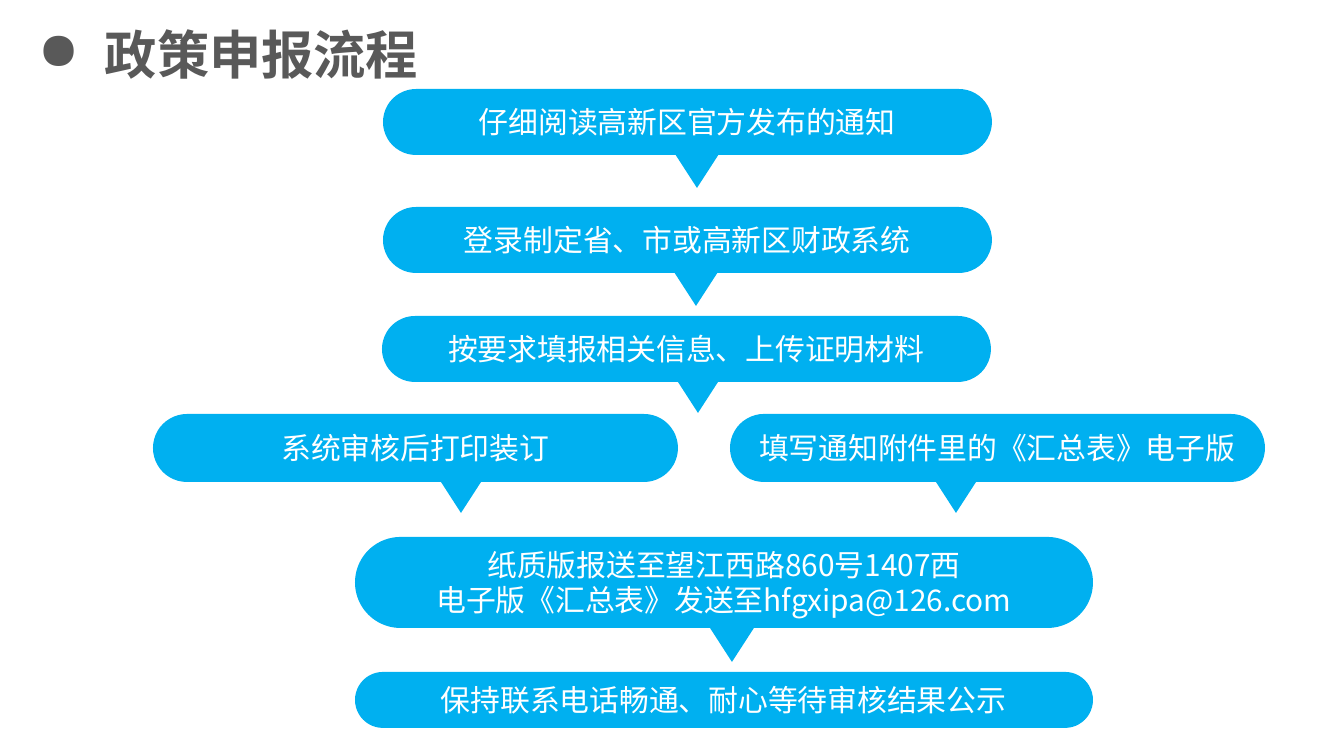
from lxml import etree
from pptx import Presentation
from pptx.dml.color import RGBColor
from pptx.enum.shapes import MSO_SHAPE
from pptx.enum.text import MSO_ANCHOR, MSO_AUTO_SIZE, PP_ALIGN
from pptx.oxml.ns import qn
from pptx.util import Pt

PILL = MSO_SHAPE.ROUNDED_RECTANGLE
MIDDLE = MSO_ANCHOR.MIDDLE
NO_FIT = MSO_AUTO_SIZE.NONE
LEFT, CENTER = PP_ALIGN.LEFT, PP_ALIGN.CENTER
FONT = "Noto Sans CJK SC"
BLUE, WHITE, GRAY = "00B0F0", "FFFFFF", "595959"
SCALE = 9144000 / 1344


def px(n):
    return round(n * SCALE)


def style(paragraph, size, color, bold=False):
    for run in paragraph.runs:
        run.font.size = Pt(size)
        run.font.bold = bold
        run.font.color.rgb = RGBColor.from_string(color)
        run.font.name = FONT
        etree.SubElement(run.font._element, qn("a:ea"), typeface=FONT)


prs = Presentation()
prs.slide_width, prs.slide_height = px(1344), px(756)
slide = prs.slides.add_slide(prs.slide_layouts[5])

title = slide.shapes.title
title.left, title.top, title.width, title.height = px(38), px(26), px(391), px(56)
heading = title.text_frame
heading.text = "政策申报流程"
heading.auto_size = NO_FIT
heading.vertical_anchor = MIDDLE
heading.margin_left = heading.margin_right = 0
topic = heading.paragraphs[0]
topic.alignment = LEFT
indent = topic._p.get_or_add_pPr()
indent.set("marL", str(px(67)))
indent.set("indent", str(px(-67)))
etree.SubElement(indent, qn("a:buChar"), char="●")
style(topic, 28, GRAY, True)

ARROW_WIDTH, ARROW_HEIGHT = 66, 51
arrows = [(664, 137), (663, 255), (665, 362), (428, 462), (923, 462), (699, 611)]
for left, top in arrows:
    outline = slide.shapes.build_freeform(left, top, scale=SCALE)
    outline.add_line_segments(
        [(left + ARROW_WIDTH, top), (left + ARROW_WIDTH // 2, top + ARROW_HEIGHT)]
    )
    arrow = outline.convert_to_shape()
    arrow.shadow.inherit = False
    arrow.fill.solid()
    arrow.fill.fore_color.rgb = RGBColor.from_string(BLUE)
    arrow.line.fill.background()

steps = [
    (383, 89, 609, 66, "仔细阅读高新区官方发布的通知"),
    (383, 207, 609, 66, "登录制定省、市或高新区财政系统"),
    (382, 316, 609, 66, "按要求填报相关信息、上传证明材料"),
    (153, 414, 525, 68, "系统审核后打印装订"),
    (730, 414, 535, 68, "填写通知附件里的《汇总表》电子版"),
    (355, 537, 738, 91, "纸质版报送至望江西路860号1407西\n电子版《汇总表》发送至hfgxipa@126.com"),
    (355, 672, 738, 56, "保持联系电话畅通、耐心等待审核结果公示"),
]
for left, top, width, height, wording in steps:
    step = slide.shapes.add_shape(PILL, px(left), px(top), px(width), px(height))
    step.adjustments[0] = 0.5
    step.shadow.inherit = False
    step.fill.solid()
    step.fill.fore_color.rgb = RGBColor.from_string(BLUE)
    step.line.fill.background()
    step.text_frame.text = wording
    step.text_frame.word_wrap = True
    step.text_frame.vertical_anchor = MIDDLE
    for line in step.text_frame.paragraphs:
        line.alignment = CENTER
        line.line_spacing = Pt(19)
        style(line, 16, WHITE)

prs.save("out.pptx")
